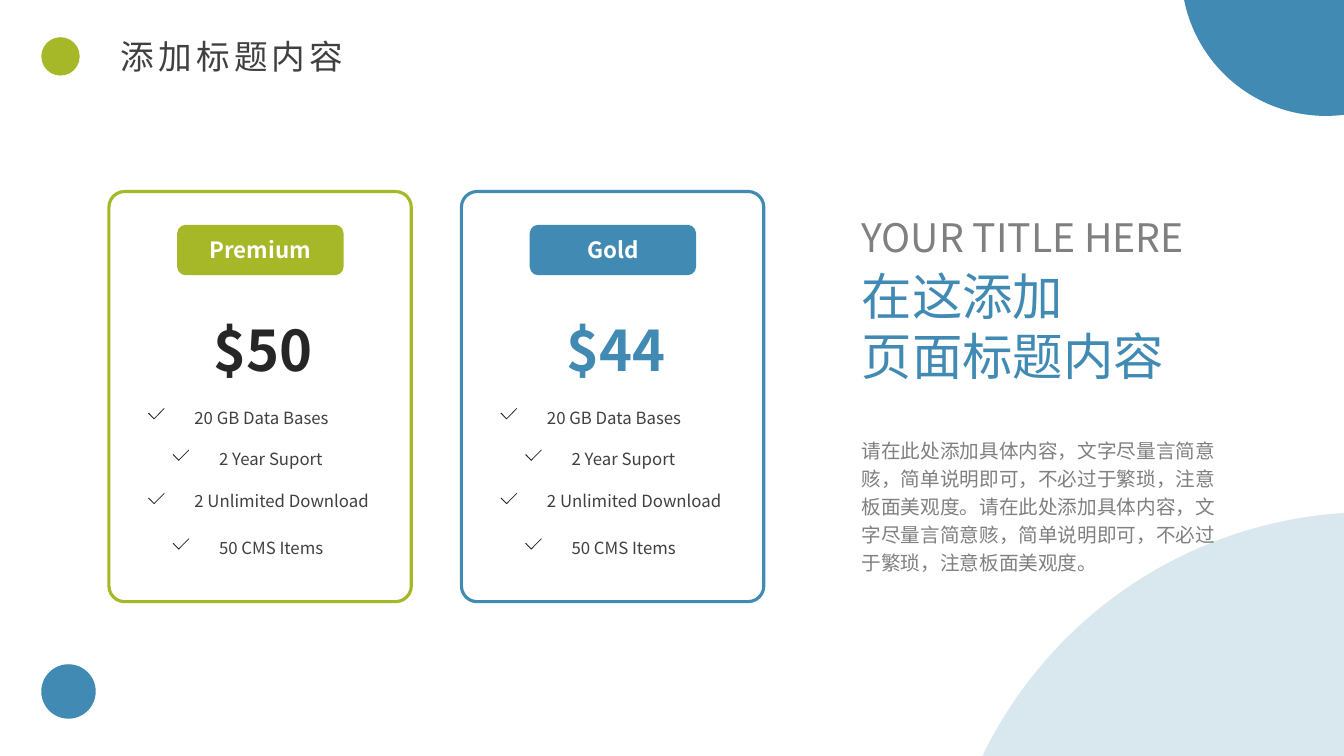
from lxml import etree
from pptx import Presentation
from pptx.dml.color import RGBColor
from pptx.enum import shapes, text
from pptx.oxml import ns
from pptx.util import Pt

GREEN = RGBColor(0xA6, 0xB7, 0x27)
BLUE = RGBColor(0x41, 0x8A, 0xB3)
WHITE = RGBColor(0xFF, 0xFF, 0xFF)
BLACK = RGBColor(0x26, 0x26, 0x26)
DARK = RGBColor(0x40, 0x40, 0x40)
GRAY = RGBColor(0x80, 0x80, 0x80)
FONT = "Noto Sans CJK SC"
TITLE_FONT = "Arial"

CARD_SIZE = (216, 293)
CARD_PITCH = 251.8
PLANS = [("Premium", "$50", GREEN, BLACK), ("Gold", "$44", BLUE, BLUE)]
FEATURES = [
    ("20 GB Data Bases", 54, 144, 154.8),
    ("2 Year Suport", 71.6, 173, 184.4),
    ("2 Unlimited Download", 54, 203, 215.4),
    ("50 CMS Items", 71.6, 236.2, 247.8),
]
TICK = [(11.8, 0.3), (11.4, 0), (4.3, 7.2), (0.6, 3.3), (0, 3.7), (4.3, 8)]


def add_shape(slide, kind, box, fill, line=None):
    """Add a flat preset shape at box (left, top, width, height)."""
    shape = slide.shapes.add_shape(kind, *(Pt(length) for length in box))
    shape.shadow.inherit = False
    shape.fill.solid()
    shape.fill.fore_color.rgb = fill
    if line is None:
        shape.line.fill.background()
    else:
        shape.line.color.rgb = line
        shape.line.width = Pt(2.25)
    return shape


def write(shape, content, size, color, align=text.PP_ALIGN.LEFT, bold=False, spacing=None, font=FONT):
    """Fill a shape with text and format every paragraph alike."""
    shape.text_frame.text = content
    for paragraph in shape.text_frame.paragraphs:
        paragraph.alignment = align
        if spacing is not None:
            paragraph.line_spacing = spacing
        for run in paragraph.runs:
            run.font.size = Pt(size)
            run.font.bold = bold
            run.font.color.rgb = color
            run.font.name = font
            east_asian = etree.SubElement(run.font._element, ns.qn("a:ea"))
            east_asian.set("typeface", FONT)


def add_text(slide, box, content, size, color, wrap=True, **style):
    """Add a text box at box and write into it."""
    shape = slide.shapes.add_textbox(*(Pt(length) for length in box))
    shape.text_frame.word_wrap = wrap
    write(shape, content, size, color, **style)
    return shape


def add_tick(slide, left, top):
    """Draw a thin check mark."""
    points = [(Pt(left + x), Pt(top + y)) for x, y in TICK]
    builder = slide.shapes.build_freeform(*points[0])
    builder.add_line_segments(points[1:], close=True)
    tick = builder.convert_to_shape()
    tick.shadow.inherit = False
    tick.fill.solid()
    tick.fill.fore_color.rgb = BLACK
    tick.line.fill.background()


def add_card(slide, box, name, price, accent, price_color):
    """Draw one price card with its badge, price and features."""
    left, top, width, height = box
    rounded = shapes.MSO_SHAPE.ROUNDED_RECTANGLE
    frame = add_shape(slide, rounded, box, WHITE, accent)
    frame.adjustments[0] = 0.052
    add_text(slide, (left + 34.3, top + 85, 152, 55.4), price, 40, price_color,
             align=text.PP_ALIGN.CENTER, bold=True)
    for feature, indent, text_top, tick_top in FEATURES:
        add_text(slide, (left + indent, top + text_top, 145, 28.8), feature, 12, DARK,
                 align=text.PP_ALIGN.JUSTIFY, spacing=1.5)
        add_tick(slide, left + indent - 26, top + tick_top)
    badge = add_shape(slide, rounded, (left + 48.8, top + 23.8, 118.8, 36), accent)
    badge.text_frame.vertical_anchor = text.MSO_ANCHOR.MIDDLE
    write(badge, name, 16, WHITE, align=text.PP_ALIGN.CENTER, bold=True)


def add_message(slide, box):
    """Place the heading and the description on the right."""
    left, top, width, height = box
    add_text(slide, (left, top + 36.7, 230.4, 93.6), "在这添加\n页面标题内容", 36, BLUE, wrap=False)
    add_text(slide, (left, top, 302.4, 35.3), "YOUR TITLE HERE", 28, GRAY)
    sentence = "请在此处添加具体内容，文字尽量言简意赅，简单说明即可，不必过于繁琐，注意板面美观度。"
    add_text(slide, (left, top + 157.7, width, height - 157.7), sentence * 2, 14, GRAY, spacing=Pt(20))


def add_decoration(slide, box):
    """Place the corner circles and the page title."""
    left, top, width, height = box
    circles = [
        (671, 365.8, 617, BLUE),
        (843.8, -123.8, 206.6, BLUE),
        (29.5, 474.5, 38.9, BLUE),
        (29.5, 26.6, 27.4, GREEN),
    ]
    for x, y, diameter, color in circles:
        circle = add_shape(slide, shapes.MSO_SHAPE.FLOWCHART_CONNECTOR,
                           (left + x, top + y, diameter, diameter), color)
        if diameter > width / 2:
            fill_color = circle._element.spPr.find(".//" + ns.qn("a:srgbClr"))
            etree.SubElement(fill_color, ns.qn("a:alpha")).set("val", "20000")
    title = add_text(slide, (left + 79.2, top + 22.3, 184.3, 36), "添加标题内容", 24, DARK,
                     align=text.PP_ALIGN.JUSTIFY, font=TITLE_FONT)
    title.text_frame.paragraphs[0].runs[0].font._element.set("spc", "300")


def main():
    """Build the pricing slide."""
    presentation = Presentation()
    presentation.slide_width, presentation.slide_height = Pt(960), Pt(540)
    slide = presentation.slides.add_slide(presentation.slide_layouts[6])
    for index, plan in enumerate(PLANS):
        add_card(slide, (77.8 + index * CARD_PITCH, 136.8, *CARD_SIZE), *plan)
    add_message(slide, (608.4, 149, 273.6, 265))
    add_decoration(slide, (0, 0, 960, 540))
    presentation.save("out.pptx")


if __name__ == "__main__":
    main()
